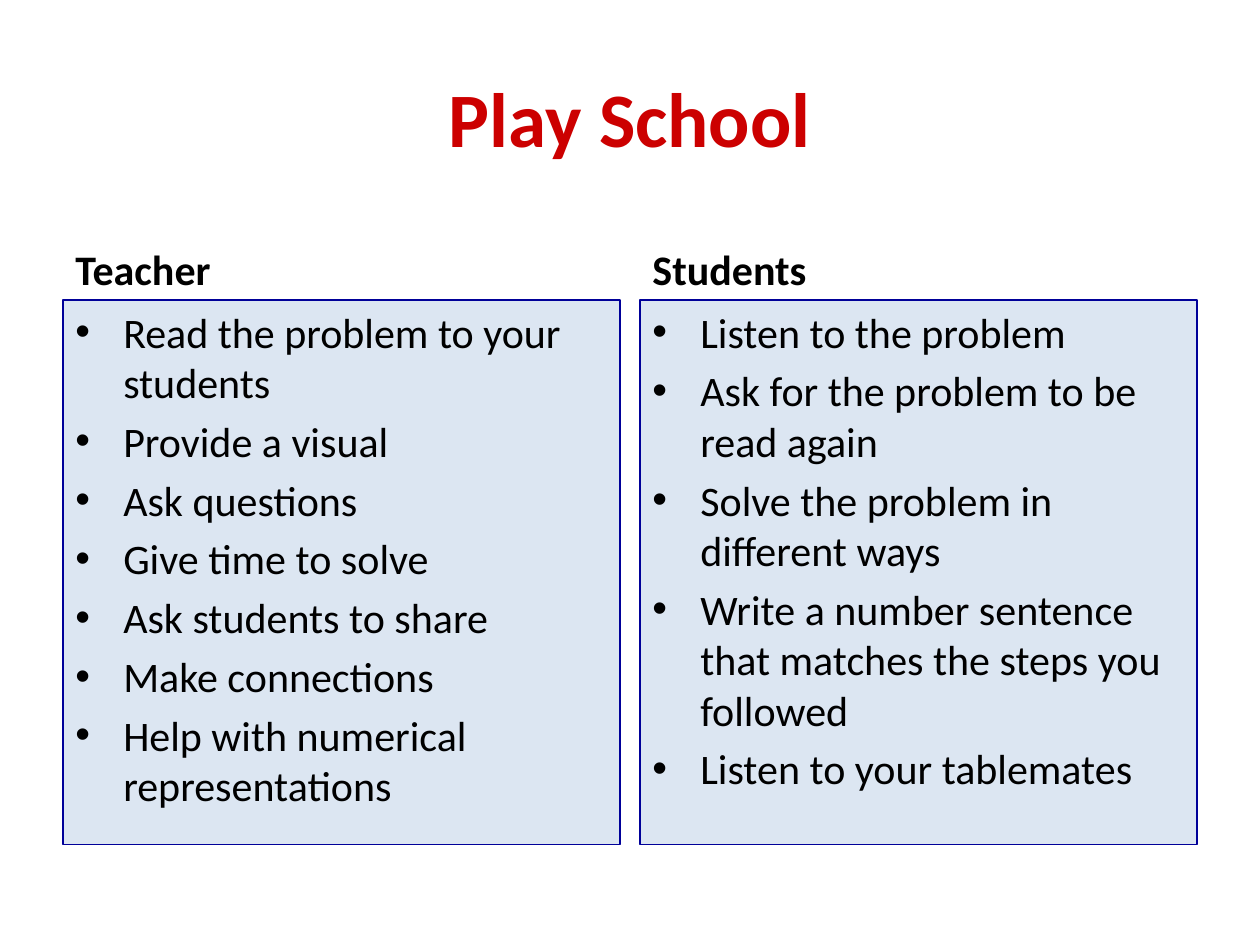
from lxml import etree
from pptx import Presentation
from pptx import util as u
from pptx.dml.color import RGBColor
from pptx.enum import shapes, text
from pptx.oxml.ns import qn

MARGIN = 0.5
COLUMN_WIDTH = 4.42
HEADING_TOP, HEADING_HEIGHT = 1.68, 0.7
LIST_HEIGHT = 4.32
COLUMNS = {
    "Teacher": [
        "Read the problem to your students",
        "Provide a visual",
        "Ask questions",
        "Give time to solve",
        "Ask students to share",
        "Make connections",
        "Help with numerical representations",
    ],
    "Students": [
        "Listen to the problem",
        "Ask for the problem to be read again",
        "Solve the problem in different ways",
        "Write a number sentence that matches the steps you followed",
        "Listen to your tablemates",
    ],
}


def color(hex_string):
    return RGBColor.from_string(hex_string)


def inches(*lengths):
    return [u.Inches(length) for length in lengths]


def add_bullet(paragraph, indent):
    """Give the paragraph a round bullet with a hanging indent in inches."""
    properties = paragraph._p.get_or_add_pPr()
    properties.set("marL", str(u.Inches(indent)))
    properties.set("indent", str(-u.Inches(indent)))
    etree.SubElement(properties, qn("a:buFont")).set("typeface", "Arial")
    etree.SubElement(properties, qn("a:buChar")).set("char", "•")


class SlideBuilder:
    font_name = "Calibri"
    title_size, body_size = 44, 24
    title_color, text_color = "CC0000", "000000"
    panel_fill, panel_line = "DCE6F2", "000099"
    bullet_indent = 0.38
    paragraph_gap = 4.8

    def __init__(self, slide):
        self.slide = slide

    def format_runs(self, paragraph, size, hex_string, bold=False):
        for run in paragraph.runs:
            run.font.name = self.font_name
            run.font.size = u.Pt(size)
            run.font.bold = bold
            run.font.color.rgb = color(hex_string)

    def title(self, wording, left, top, width, height):
        shape = self.slide.shapes.title
        shape.left, shape.top, shape.width, shape.height = inches(left, top, width, height)
        frame = shape.text_frame
        frame.text = wording
        frame.vertical_anchor = text.MSO_ANCHOR.MIDDLE
        paragraph = frame.paragraphs[0]
        paragraph.alignment = text.PP_ALIGN.CENTER
        self.format_runs(paragraph, self.title_size, self.title_color, bold=True)

    def heading(self, wording, left, top, width, height):
        box = self.slide.shapes.add_textbox(*inches(left, top, width, height))
        frame = box.text_frame
        frame.word_wrap = True
        frame.vertical_anchor = text.MSO_ANCHOR.BOTTOM
        frame.text = wording
        self.format_runs(frame.paragraphs[0], self.body_size, self.text_color, bold=True)

    def bullet_panel(self, items, left, top, width, height):
        panel = self.slide.shapes.add_shape(
            shapes.MSO_SHAPE.RECTANGLE, *inches(left, top, width, height))
        panel.shadow.inherit = False
        panel.fill.solid()
        panel.fill.fore_color.rgb = color(self.panel_fill)
        panel.line.color.rgb = color(self.panel_line)
        panel.line.width = u.Pt(0.75)
        frame = panel.text_frame
        frame.word_wrap = True
        frame.vertical_anchor = text.MSO_ANCHOR.TOP
        frame.text = "\n".join(items)
        for index, paragraph in enumerate(frame.paragraphs):
            add_bullet(paragraph, self.bullet_indent)
            paragraph.alignment = text.PP_ALIGN.LEFT
            if index:
                paragraph.space_before = u.Pt(self.paragraph_gap)
            self.format_runs(paragraph, self.body_size, self.text_color)


def main():
    presentation = Presentation()
    presentation.slide_width, presentation.slide_height = inches(10, 7.5)
    title_only = presentation.slide_layouts.get_by_name("Title Only")
    builder = SlideBuilder(presentation.slides.add_slide(title_only))

    builder.title("Play School", MARGIN, 0.3, 9, 1.25)
    column_lefts = (MARGIN, 10 - MARGIN - COLUMN_WIDTH)
    for left, (heading, items) in zip(column_lefts, COLUMNS.items()):
        builder.heading(heading, left, HEADING_TOP, COLUMN_WIDTH, HEADING_HEIGHT)
        builder.bullet_panel(
            items, left, HEADING_TOP + HEADING_HEIGHT, COLUMN_WIDTH, LIST_HEIGHT)

    presentation.save("out.pptx")


if __name__ == "__main__":
    main()
